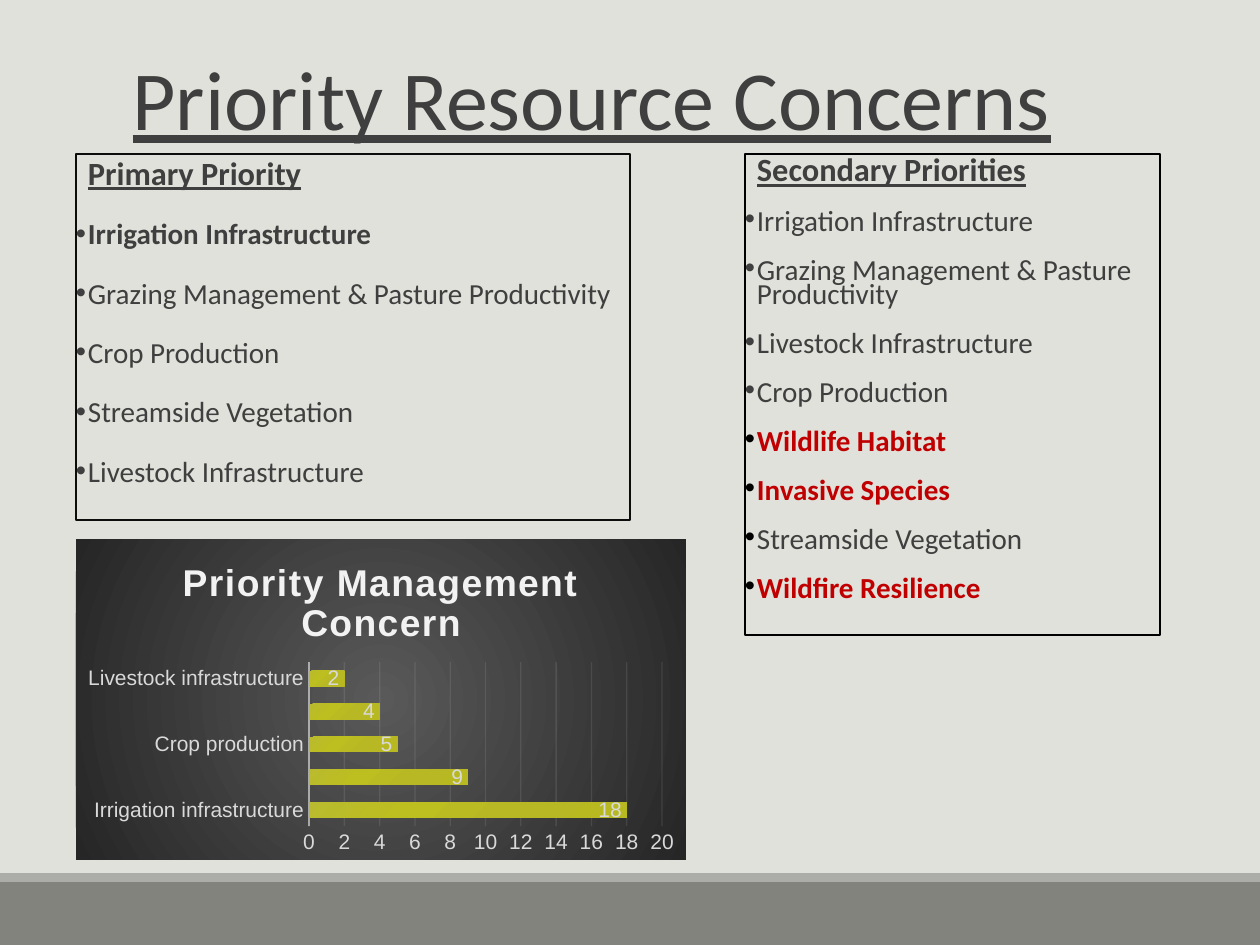
"""Build the slide on priority resource concerns."""
from lxml.etree import SubElement as Sub
from pptx import Presentation
from pptx.chart.data import CategoryChartData as Data
from pptx.dml.color import RGBColor as RGB
from pptx.enum.chart import XL_CHART_TYPE as Kind, XL_LABEL_POSITION as Spot
from pptx.enum.chart import XL_TICK_MARK as Tick
from pptx.enum.shapes import MSO_SHAPE as Form
from pptx.enum.text import MSO_ANCHOR as Anchor, MSO_AUTO_SIZE as Auto, PP_ALIGN as Align
from pptx.oxml import parse_xml
from pptx.oxml.ns import qn
from pptx.util import Pt

INK, RED, BLACK, PALE, SNOW = "3F3F3F", "C00000", "000000", "D9D9D9", "F2F2F2"
TITLE = "Priority Resource Concerns"
LEFT = ("Primary Priority", [
    ("Irrigation Infrastructure", INK, True, INK),
    ("Grazing Management & Pasture Productivity", INK, False, INK),
    ("Crop Production", INK, False, INK),
    ("Streamside Vegetation", INK, False, INK),
    ("Livestock Infrastructure", INK, False, INK),
])
RIGHT = ("Secondary Priorities", [
    ("Irrigation Infrastructure", INK, False, INK),
    ("Grazing Management & Pasture Productivity", INK, False, INK),
    ("Livestock Infrastructure", INK, False, INK),
    ("Crop Production", INK, False, INK),
    ("Wildlife Habitat", RED, True, BLACK),
    ("Invasive Species", RED, True, BLACK),
    ("Streamside Vegetation", INK, False, BLACK),
    ("Wildfire Resilience", RED, True, BLACK),
])
PANELS = [
    (LEFT, (76, 154, 554, 366), "0C0C0C", 0.8, 1.0),
    (RIGHT, (745, 154, 415, 481), BLACK, 0.7, 0.7),
]
BANDS = [((0, 882, 1260, 63), "82837C"), ((0, 873, 1260, 9), "ACADA8")]
NAME = "Priority Management Concern"
VALUES = [
    ("Irrigation infrastructure", 18),
    ("", 9),
    ("Crop production", 5),
    ("", 4),
    ("Livestock infrastructure", 2),
]
PLATE = [(0, "595959"), (100, "262626")]
OLIVE = [(0, "B8B920"), (34, "B7B823"), (70, "BDBE20"), (100, "B9BA2F")]
NS = 'xmlns:a="http://schemas.openxmlformats.org/drawingml/2006/main"'


def px(n):
    return round(n * 914400 / 126)


def place(box):
    return [px(n) for n in box]


def tint(code):
    return RGB.from_string(code)


def style(font, size, color, face="Calibri", bold=False, line=False):
    font.size, font.name, font.bold, font.underline = Pt(size), face, bold, line
    font.color.rgb = tint(color)


def write(para, text, size, color, space=1.0, before=0, **look):
    run = para.add_run()
    run.text = text
    para.line_spacing, para.space_before = space, Pt(before)
    style(run.font, size, color, **look)
    return run


def bullet(para, mark, color):
    props = para._p.get_or_add_pPr()
    props.set("marL", str(px(12)))
    props.set("indent", str(px(-15)))
    Sub(Sub(props, qn("a:buClr")), qn("a:srgbClr"), val=color)
    Sub(props, qn("a:buFont"), typeface="Arial")
    Sub(props, qn("a:buChar"), char=mark)


def shade(stops, x, y):
    marks = "".join(f'<a:gs pos="{at * 1000}"><a:srgbClr val="{code}"/></a:gs>'
                    for at, code in stops)
    rect = f'l="{x}000" t="{y}000" r="{100 - x}000" b="{100 - y}000"'
    return parse_xml(f'<a:gradFill {NS}><a:gsLst>{marks}</a:gsLst>'
                     f'<a:path path="circle"><a:fillToRect {rect}/></a:path></a:gradFill>')


def stroke(line, width, alpha):
    line.width = Pt(width)
    line.color.rgb = tint(SNOW)
    code = line._get_or_add_ln().find(".//" + qn("a:srgbClr"))
    Sub(code, qn("a:alpha"), val=str(alpha * 1000))


def band(slide, box, color):
    bar = slide.shapes.add_shape(Form.RECTANGLE, *place(box))
    bar.shadow.inherit = False
    bar.fill.solid()
    bar.fill.fore_color.rgb = tint(color)
    bar.line.fill.background()


def panel(slide, words, box, edge, top, space):
    shape = slide.shapes.add_textbox(*place(box))
    shape.line.color.rgb, shape.line.width = tint(edge), Pt(0.75)
    frame = shape.text_frame
    frame.word_wrap = True
    frame.margin_left = frame.margin_right = 0
    head, items = words
    para = frame.paragraphs[0]
    bullet(para, " ", "9DBFBE")
    write(para, head, 18.5, INK, top, bold=True, line=True)
    for text, color, bold, dot in items:
        para = frame.add_paragraph()
        bullet(para, "•", dot)
        write(para, text, 16.6, color, space, 14, bold=bold)


def graph(slide):
    data = Data()
    data.categories = [name for name, _ in VALUES]
    data.add_series(NAME, [value for _, value in VALUES])
    chart = slide.shapes.add_chart(
        Kind.BAR_CLUSTERED, *place((76, 539, 610, 321)), data).chart
    style(chart.font, 10, BLACK, "Arial")
    chart.has_legend = False
    back = parse_xml(f'<c:spPr xmlns:c="{chart._chartSpace.nsmap["c"]}" {NS}/>')
    back.append(shade(PLATE, 50, 50))
    Sub(Sub(back, qn("a:ln")), qn("a:noFill"))
    chart._chartSpace.find(qn("c:txPr")).addprevious(back)

    chart.has_title = True
    para = chart.chart_title.text_frame.paragraphs[0]
    run = write(para, NAME, 21.3, SNOW, face="Arial", bold=True)
    run._r.get_or_add_rPr().set("spc", "100")
    chart.chart_title.include_in_layout = False

    plot = chart.plots[0]
    plot.gap_width, plot.overlap, plot.vary_by_categories = 115, -20, False
    plot.series[0]._element.get_or_add_spPr().append(shade(OLIVE, 100, 100))
    plot.has_data_labels = True
    labels = plot.data_labels
    labels.show_value, labels.position = True, Spot.INSIDE_END
    style(labels.font, 12, PALE, "Arial")

    for axis in (chart.category_axis, chart.value_axis):
        axis.major_tick_mark = axis.minor_tick_mark = Tick.NONE
        style(axis.tick_labels.font, 12, PALE, "Arial")
    stroke(chart.category_axis.format.line, 1, 54)
    chart.value_axis.format.line.fill.background()
    stroke(chart.value_axis.major_gridlines.format.line, 0.75, 10)


def main():
    deck = Presentation()
    deck.slide_width, deck.slide_height = px(1260), px(945)
    slide = deck.slides.add_slide(deck.slide_layouts[5])
    slide.background.fill.solid()
    slide.background.fill.fore_color.rgb = tint("E1E1DB")
    for box, color in BANDS:
        band(slide, box, color)
    title = slide.shapes.title
    title.left, title.top, title.width, title.height = place((120, 40, 1040, 114))
    frame = title.text_frame
    frame.auto_size, frame.vertical_anchor = Auto.NONE, Anchor.BOTTOM
    frame.paragraphs[0].alignment = Align.LEFT
    write(frame.paragraphs[0], TITLE, 48, INK, 0.85, line=True)
    for item in PANELS:
        panel(slide, *item)
    graph(slide)
    deck.save("out.pptx")


if __name__ == "__main__":
    main()
